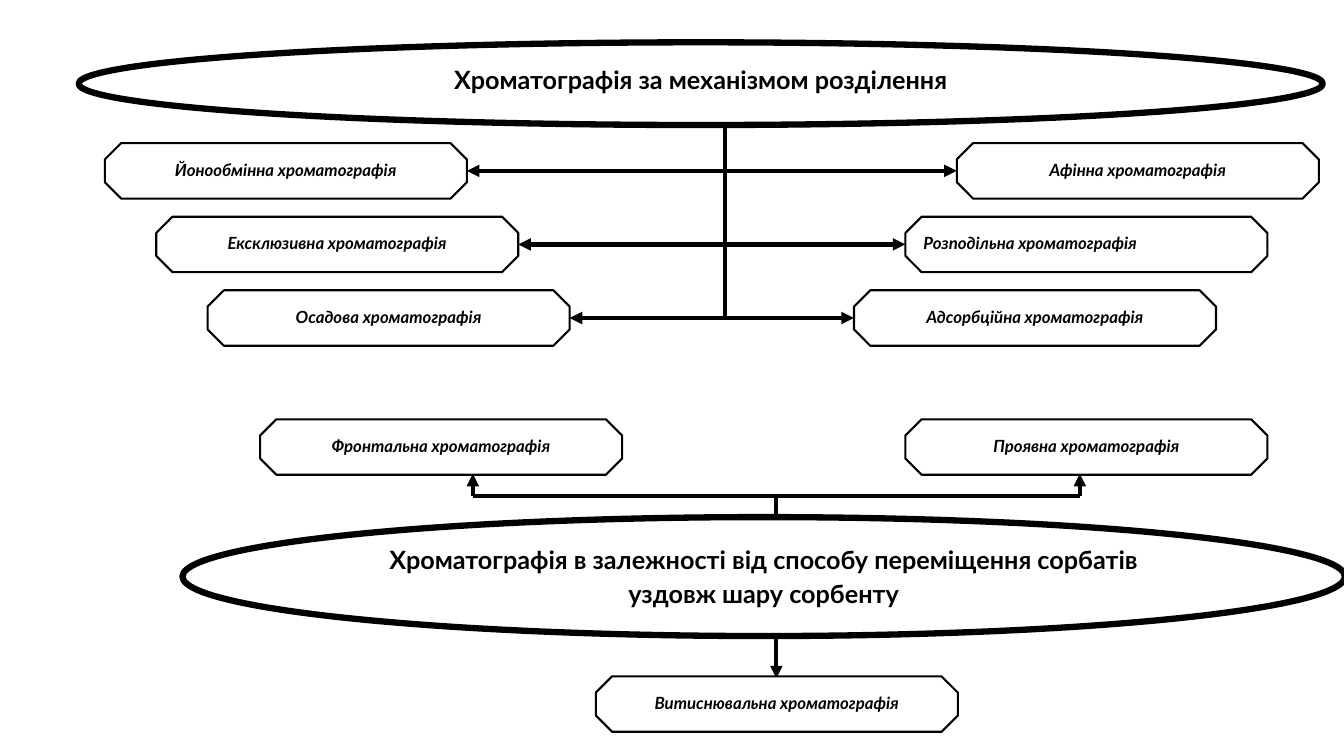
"""Builds a slide that sorts chromatography by mechanism and by sorbate movement."""
from dataclasses import dataclass

from lxml.etree import SubElement
from pptx import Presentation
from pptx.dml.color import RGBColor
from pptx.enum.shapes import MSO_CONNECTOR, MSO_SHAPE
from pptx.enum.text import MSO_ANCHOR, MSO_AUTO_SIZE, PP_ALIGN
from pptx.oxml.ns import qn
from pptx.util import Inches, Pt


@dataclass(frozen=True)
class Theme:
    font: str = "Lato"
    ink: RGBColor = RGBColor(0, 0, 0)
    paper: RGBColor = RGBColor(255, 255, 255)
    head: int = 18
    label: int = 12
    thick: float = 4.5
    wire: float = 3
    thin: float = 1.5


THEME = Theme()
BOX_W, BOX_H = 3.59, 0.55


def write(frame, text, size=THEME.label, italic=False, align=PP_ALIGN.CENTER):
    frame.word_wrap = True
    frame.auto_size = MSO_AUTO_SIZE.NONE
    frame.vertical_anchor = MSO_ANCHOR.TOP
    para = frame.paragraphs[0]
    para.text = text
    para.alignment = align
    para.line_spacing = 1.15
    para.space_after = Pt(10)
    font = para.runs[0].font
    font.name, font.size = THEME.font, Pt(size)
    font.bold, font.italic = True, italic
    font.color.rgb = THEME.ink


class Chart:
    def __init__(self, slide, theme):
        self.slide, self.theme = slide, theme

    def shape(self, kind, left, top, width, height, weight):
        shape = self.slide.shapes.add_shape(
            kind, Inches(left), Inches(top), Inches(width), Inches(height))
        shape.shadow.inherit = False
        shape.fill.solid()
        shape.fill.fore_color.rgb = self.theme.paper
        shape.line.color.rgb = self.theme.ink
        shape.line.width = Pt(weight)
        return shape

    def oval(self, left, top, width, height):
        return self.shape(MSO_SHAPE.OVAL, left, top, width, height, self.theme.thick)

    def title(self, text, left, top, width, height):
        title = self.slide.shapes.title
        title.left, title.top = Inches(left), Inches(top)
        title.width, title.height = Inches(width), Inches(height)
        write(title.text_frame, text, size=self.theme.head)
        self.slide.shapes._spTree.append(title._element)

    def box(self, text, left, top, align=PP_ALIGN.CENTER):
        box = self.shape(MSO_SHAPE.OCTAGON, left, top, BOX_W, BOX_H, self.theme.thin)
        box.adjustments[0] = 0.293
        write(box.text_frame, text, italic=True, align=align)

    def wire(self, x1, y1, x2, y2, ends=()):
        wire = self.slide.shapes.add_connector(
            MSO_CONNECTOR.STRAIGHT, Inches(x1), Inches(y1), Inches(x2), Inches(y2))
        wire.line.color.rgb = self.theme.ink
        wire.line.width = Pt(self.theme.wire)
        line = wire.line._get_or_add_ln()
        for end in ends:
            SubElement(line, qn(f"a:{end}"), type="triangle")
        SubElement(wire._element.spPr, qn("a:effectLst"))


def by_mechanism(chart):
    chart.oval(0.78, 0.42, 12.34, 0.82)
    chart.title("Хроматографія за механізмом розділення", 2.59, 0.54, 8.72, 0.58)
    chart.wire(7.19, 1.24, 7.19, 3.15)
    rows = [
        ("Йонообмінна хроматографія", "Афінна хроматографія", PP_ALIGN.CENTER),
        ("Ексклюзивна хроматографія", "Розподільна хроматографія", PP_ALIGN.LEFT),
        ("Осадова хроматографія", "Адсорбційна хроматографія", PP_ALIGN.CENTER),
    ]
    for row, (first, second, align) in enumerate(rows):
        left, right, top = 1.04 + 0.51 * row, 9.49 - 0.51 * row, 1.42 + 0.73 * row
        mid = top + BOX_H / 2
        chart.wire(left + BOX_W, mid, right, mid, ends=("headEnd", "tailEnd"))
        chart.box(first, left, top)
        chart.box(second, right, top, align=align)


def by_movement(chart):
    oval = chart.oval(1.81, 5.13, 11.53, 1.18)
    write(oval.text_frame, "Хроматографія в залежності від способу переміщення "
          "сорбатів уздовж шару сорбенту", size=chart.theme.head)
    stem, bar, ends = 7.7, 4.92, (4.69, 10.71)
    chart.wire(ends[0], bar, ends[1], bar)
    chart.wire(stem, 5.13, stem, bar)
    for x in ends:
        chart.wire(x, bar, x, 4.7, ends=("tailEnd",))
    chart.wire(stem, 6.31, stem, 6.73, ends=("tailEnd",))
    chart.box("Фронтальна хроматографія", 2.58, 4.16)
    chart.box("Проявна хроматографія", 8.98, 4.16)
    chart.box("Витиснювальна хроматографія", 5.91, 6.71)


def main():
    deck = Presentation()
    deck.slide_width, deck.slide_height = Inches(13.33), Inches(7.5)
    chart = Chart(deck.slides.add_slide(deck.slide_layouts[5]), THEME)
    by_mechanism(chart)
    by_movement(chart)
    deck.save("out.pptx")


if __name__ == "__main__":
    main()
